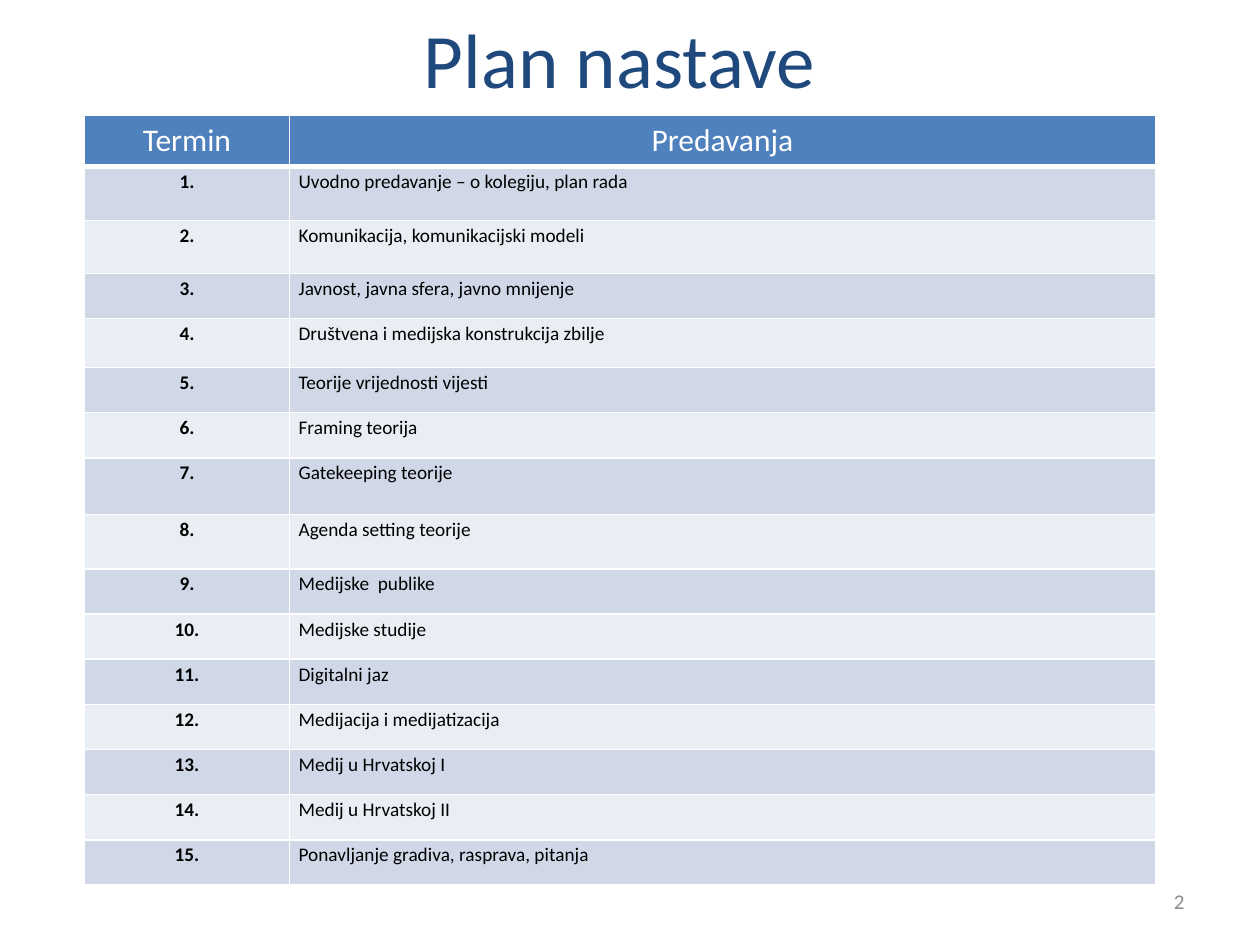
import pptx
import pptx.util
import pptx.dml.color
import pptx.enum.text
import pptx.oxml
import pptx.oxml.ns
from dataclasses import dataclass

Cm, Pt = pptx.util.Cm, pptx.util.Pt
ALIGN = pptx.enum.text.PP_ALIGN
MIDDLE = pptx.enum.text.MSO_ANCHOR.MIDDLE


@dataclass
class Theme:
    font: str = "Calibri"
    title: str = "1F497D"
    head: str = "4F81BD"
    bands: tuple = ("D0D8E8", "E9EDF4")
    white: str = "FFFFFF"
    text: str = "000000"
    muted: str = "8C8C8C"
    big: int = 44
    mid: int = 18
    small: int = 11
    note: int = 12


TOPICS = [
    "Uvodno predavanje – o kolegiju, plan rada",
    "Komunikacija, komunikacijski modeli",
    "Javnost, javna sfera, javno mnijenje",
    "Društvena i medijska konstrukcija zbilje",
    "Teorije vrijednosti vijesti",
    "Framing teorija",
    "Gatekeeping teorije",
    "Agenda setting teorije",
    "Medijske  publike",
    "Medijske studije",
    "Digitalni jaz",
    "Medijacija i medijatizacija",
    "Medij u Hrvatskoj I",
    "Medij u Hrvatskoj II",
    "Ponavljanje gradiva, rasprava, pitanja",
]
# Row heights in cm; all other rows take the base height
BASE = 0.91
TALL = {0: 1.03, 1: 1.09, 2: 1.06, 4: 0.99, 7: 1.14, 8: 1.1}


class Deck:
    def __init__(self, theme):
        self.theme = theme
        self.prs = pptx.Presentation()
        self.prs.slide_width, self.prs.slide_height = Cm(25.4), Cm(19.05)
        self.slide = self.prs.slides.add_slide(self.prs.slide_layouts[0])
        sub = self.slide.placeholders[1].element
        sub.getparent().remove(sub)

    def style(self, frame, text, size, color, align, bold=False):
        frame.text = text
        par = frame.paragraphs[0]
        par.alignment = align
        par.font.name, par.font.size, par.font.bold = self.theme.font, Pt(size), bold
        par.font.color.rgb = pptx.dml.color.RGBColor.from_string(color)
        return par

    def title(self, text, left, top, width, height):
        shape = self.slide.shapes.title
        shape.left, shape.top = Cm(left), Cm(top)
        shape.width, shape.height = Cm(width), Cm(height)
        shape.text_frame.vertical_anchor = MIDDLE
        self.style(shape.text_frame, text, self.theme.big, self.theme.title, ALIGN.CENTER)

    def label(self, text, left, top, width, height):
        box = self.slide.shapes.add_textbox(Cm(left), Cm(top), Cm(width), Cm(height))
        box.text_frame.word_wrap = True
        box.text_frame.vertical_anchor = MIDDLE
        self.style(box.text_frame, text, self.theme.note, self.theme.muted, ALIGN.RIGHT)

    def paint(self, cell, color, base=1):
        # Borders come before the fill in the cell properties
        props = cell._tc.get_or_add_tcPr()
        for side, width in (("L", 1), ("R", 1), ("T", 1), ("B", base)):
            props.append(pptx.oxml.parse_xml(
                f'<a:ln{side} {pptx.oxml.ns.nsdecls("a")} w="{Pt(width)}"><a:solidFill>'
                f'<a:srgbClr val="{self.theme.white}"/></a:solidFill></a:ln{side}>'))
        cell.fill.solid()
        cell.fill.fore_color.rgb = pptx.dml.color.RGBColor.from_string(color)

    def table(self, heads, rows, left, top, widths, heights):
        look = self.theme
        grid = self.slide.shapes.add_table(
            len(heights), len(widths), Cm(left), Cm(top),
            Cm(sum(widths)), Cm(sum(heights))).table
        for col, width in zip(grid.columns, widths):
            col.width = Cm(width)
        for row, height in zip(grid.rows, heights):
            row.height = Cm(height)
        # Header row
        for cell, text in zip(grid.rows[0].cells, heads):
            self.paint(cell, look.head, 3)
            self.style(cell.text_frame, text, look.mid, look.white, ALIGN.CENTER)
        # Banded body rows, with the first column bold and centred
        for r, row in enumerate(rows):
            for c, text in enumerate(row):
                cell = grid.cell(r + 1, c)
                cell.margin_left = cell.margin_right = Cm(0.18)
                cell.margin_top = cell.margin_bottom = 0
                self.paint(cell, look.bands[r % 2])
                align = ALIGN.LEFT if c else ALIGN.CENTER
                par = self.style(cell.text_frame, text, look.small, look.text, align, c == 0)
                par.line_spacing = 1.15


def main():
    deck = Deck(Theme())
    # Title
    deck.title("Plan nastave", 1.7, 0, 21.59, 2.33)
    # Schedule
    rows = [(f"{n}.", topic) for n, topic in enumerate(TOPICS, 1)]
    heights = [TALL.get(n, BASE) for n in range(len(rows) + 1)]
    deck.table(("Termin", "Predavanja"), rows, 1.7, 2.33, (4.14, 17.45), heights)
    # Page number
    deck.label("2", 18.2, 17.66, 5.93, 1.01)
    deck.prs.save("out.pptx")


if __name__ == "__main__":
    main()
